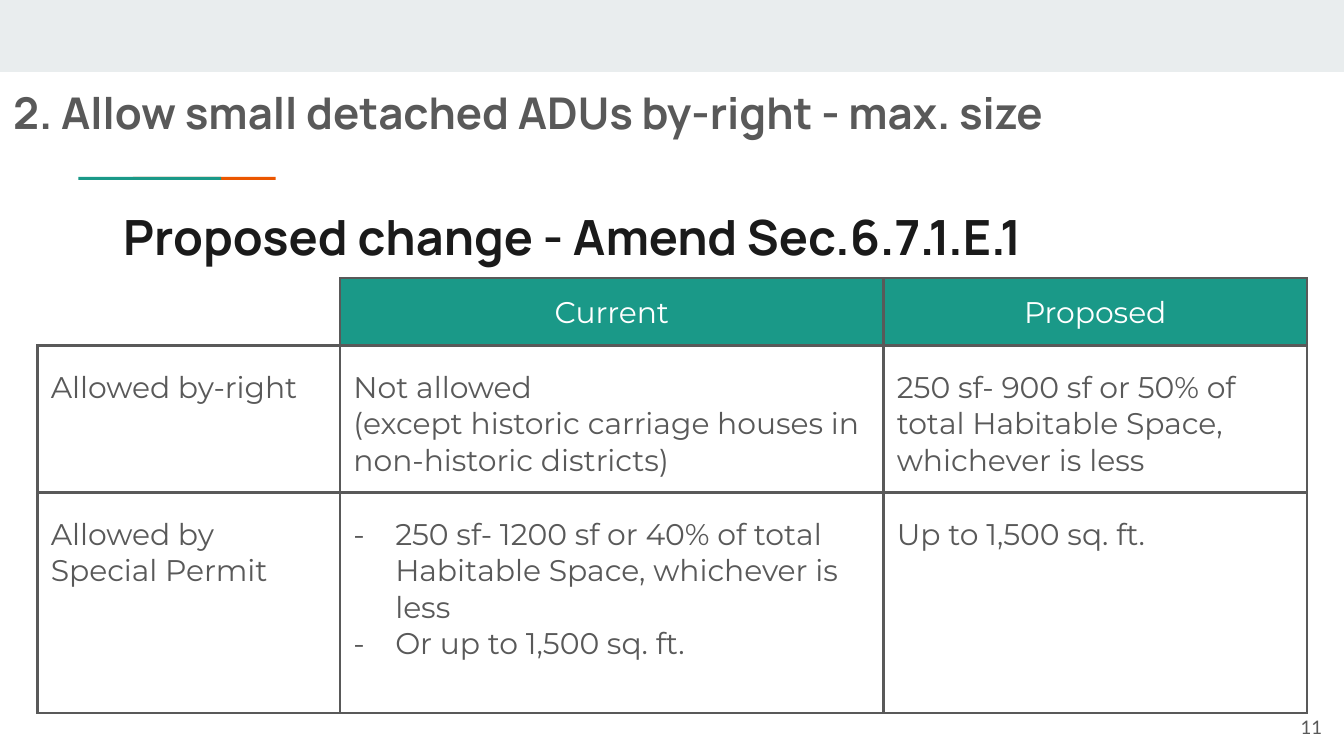
from lxml import etree
from pptx import Presentation
from pptx.dml.color import RGBColor
from pptx.enum.shapes import MSO_SHAPE
from pptx.enum.text import MSO_ANCHOR, PP_ALIGN
from pptx.oxml.ns import qn
from pptx.util import Cm, Pt

RECTANGLE = MSO_SHAPE.RECTANGLE
TOP, MIDDLE = MSO_ANCHOR.TOP, MSO_ANCHOR.MIDDLE
LEFT, CENTER, RIGHT = PP_ALIGN.LEFT, PP_ALIGN.CENTER, PP_ALIGN.RIGHT

TEAL, ORANGE, PALE = "1A9988", "EB5600", "E9EDEE"
GRAY, BLACK, WHITE = "595959", "1A1A1A", "FFFFFF"
TABLE_FONT = "Montserrat"
INSET = 0.25
COLUMN_WIDTHS = (5.72, 10.27, 8)
ROW_HEIGHTS = (1.27, 2.78, 4.17)
SIZE_LIMITS = (
    ("", "Current", "Proposed"),
    ("Allowed by-right",
     "Not allowed\n(except historic carriage houses in non-historic districts)",
     "250 sf- 900 sf or 50% of total Habitable Space, whichever is less"),
    ("Allowed by Special Permit",
     "- 250 sf- 1200 sf or 40% of total Habitable Space, whichever is less\n"
     "- Or up to 1,500 sq. ft.",
     "Up to 1,500 sq. ft."),
)


def color(hex_code):
    return RGBColor.from_string(hex_code)


def add_band(slide, left, top, width, height, fill, rotation=0):
    band = slide.shapes.add_shape(RECTANGLE, Cm(left), Cm(top), Cm(width), Cm(height))
    band.rotation = rotation
    band.shadow.inherit = False
    band.fill.solid()
    band.fill.fore_color.rgb = color(fill)
    band.line.fill.background()


def set_run(paragraph, words, font_color, **font_format):
    run = paragraph.add_run()
    run.text = words
    run.font.color.rgb = color(font_color)
    for key, value in font_format.items():
        setattr(run.font, key, value)


def add_text(slide, left, top, width, height, words, font_color,
             align=LEFT, anchor=TOP, **font_format):
    frame = slide.shapes.add_textbox(Cm(left), Cm(top), Cm(width), Cm(height)).text_frame
    layout = {"word_wrap": True, "vertical_anchor": anchor}
    layout.update({f"margin_{side}": Cm(INSET)
                   for side in ("left", "top", "right", "bottom")})
    for key, value in layout.items():
        setattr(frame, key, value)
    paragraph = frame.paragraphs[0]
    paragraph.alignment = align
    set_run(paragraph, words, font_color, **font_format)


def add_dash(paragraph):
    """Give the paragraph a hanging dash as its bullet."""
    properties = paragraph._p.get_or_add_pPr()
    properties.set("marL", str(Cm(0.79)))
    properties.set("indent", str(Cm(-0.91)))
    bullet_color = etree.SubElement(properties, qn("a:buClr"))
    etree.SubElement(bullet_color, qn("a:srgbClr"), val=GRAY)
    etree.SubElement(properties, qn("a:buSzPts"), val="1600")
    etree.SubElement(properties, qn("a:buFont"), typeface=TABLE_FONT)
    etree.SubElement(properties, qn("a:buChar"), char="-")


def set_borders(cell, hidden_sides):
    properties = cell._tc.get_or_add_tcPr()
    for side in "LRTB":
        border = etree.SubElement(properties, qn(f"a:ln{side}"), w=str(Pt(1.5)))
        if side in hidden_sides:
            etree.SubElement(border, qn("a:noFill"))
        else:
            fill = etree.SubElement(border, qn("a:solidFill"))
            etree.SubElement(fill, qn("a:srgbClr"), val=GRAY)


def fill_cell(cell, words, is_header):
    if not words:
        cell.margin_top = cell.margin_bottom = Cm(0.1)
        set_borders(cell, "LT")
        cell.fill.background()
        return
    cell_format = {
        "margin_left": Cm(INSET), "margin_right": Cm(INSET),
        "margin_top": Cm(0.3 if is_header else 0.46),
        "margin_bottom": Cm(INSET),
        "vertical_anchor": MIDDLE if is_header else TOP,
    }
    for key, value in cell_format.items():
        setattr(cell, key, value)
    set_borders(cell, "")
    if is_header:
        cell.fill.solid()
        cell.fill.fore_color.rgb = color(TEAL)
    else:
        cell.fill.background()
    frame = cell.text_frame
    for index, line in enumerate(words.split("\n")):
        paragraph = frame.add_paragraph() if index else frame.paragraphs[0]
        paragraph.alignment = CENTER if is_header else LEFT
        if line.startswith("- "):
            add_dash(paragraph)
        set_run(paragraph, line.removeprefix("- "), WHITE if is_header else GRAY,
                name=TABLE_FONT, size=Pt(16))


def add_limits_table(slide, left, top):
    table = slide.shapes.add_table(
        len(ROW_HEIGHTS), len(COLUMN_WIDTHS), Cm(left), Cm(top),
        Cm(sum(COLUMN_WIDTHS)), Cm(sum(ROW_HEIGHTS))).table
    table.first_row = table.horz_banding = False
    for column, width in zip(table.columns, COLUMN_WIDTHS):
        column.width = Cm(width)
    for row, height in zip(table.rows, ROW_HEIGHTS):
        row.height = Cm(height)
    for r, limits in enumerate(SIZE_LIMITS):
        for c, words in enumerate(limits):
            fill_cell(table.cell(r, c), words, r == 0)


def main():
    deck = Presentation()
    deck.slide_width, deck.slide_height = Cm(25.4), Cm(14.29)
    slide = deck.slides.add_slide(deck.slide_layouts[6])

    add_band(slide, 0, 0, 25.4, 1.36, PALE)
    for left, fill in ((3.83, ORANGE), (2.8, TEAL)):
        add_band(slide, left, 2.02, 0.06, 2.7, fill, rotation=270)
    add_limits_table(slide, 0.71, 5.26)
    add_text(slide, 2.08, 3.66, 21.64, 1.63, "Proposed change - Amend Sec.6.7.1.E.1",
             BLACK, name="Manrope", size=Pt(26), bold=True)
    add_text(slide, 23.72, 13.19, 1.52, 1.09, "11", GRAY, RIGHT, MIDDLE,
             name="Lato", size=Pt(10))
    add_text(slide, 0, 1.37, 21.36, 1.5, "2. Allow small detached ADUs by-right - max. size",
             GRAY, name="Manrope", size=Pt(23.4), bold=True)
    deck.save("out.pptx")


if __name__ == "__main__":
    main()
